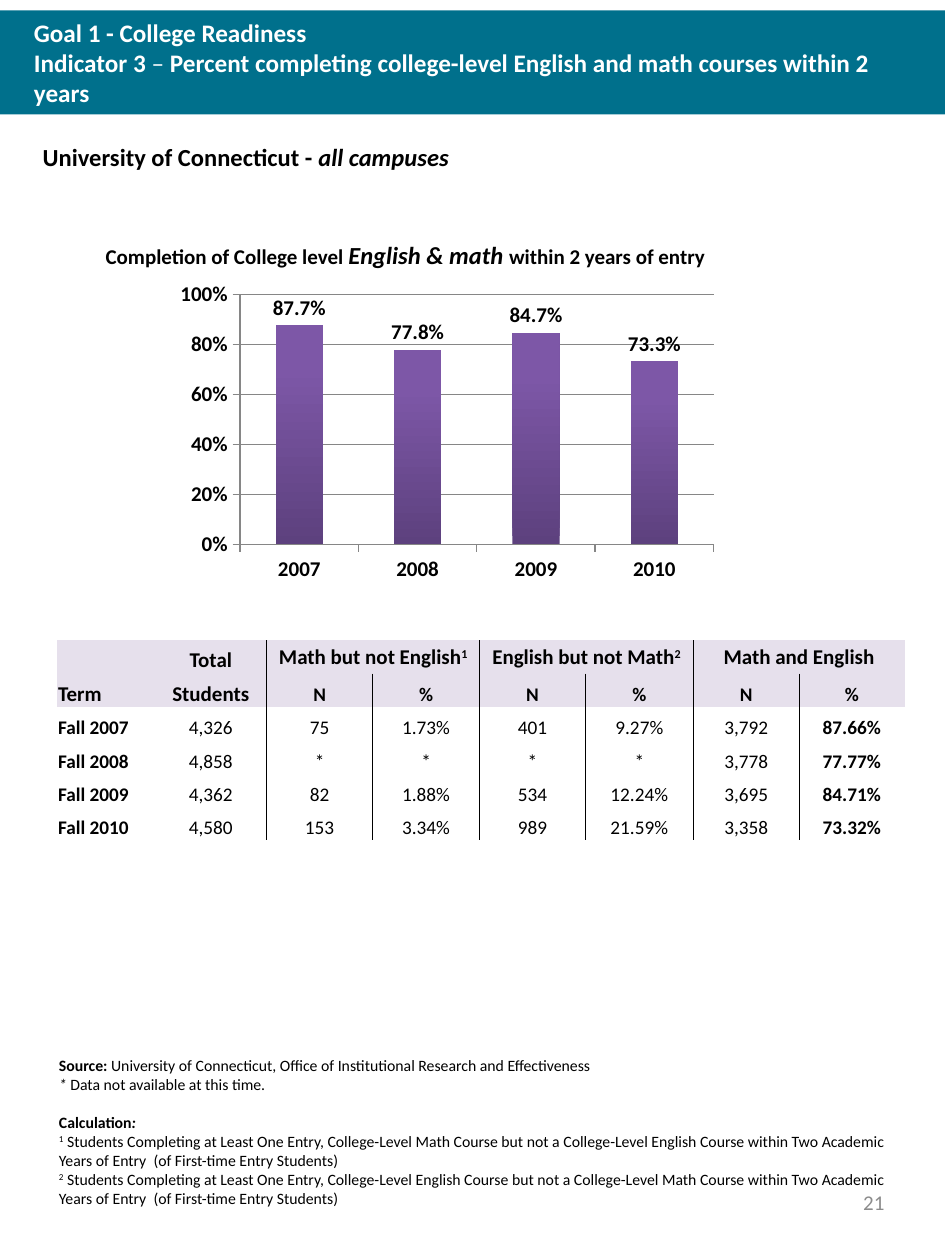
from lxml import etree
from pptx import Presentation
from pptx import util as u
from pptx.chart import data
from pptx.dml import color as dml
from pptx.enum import chart as ch, shapes, text
from pptx.oxml import parse_xml
from pptx.oxml.ns import nsdecls, qn

Cm, Pt = u.Cm, u.Pt
AL, ANC = text.PP_ALIGN, text.MSO_ANCHOR
GREY = "868686"


def rgb(value):
    return dml.RGBColor.from_string(value)


def add_run(p, txt, size=12, bold=False, italic=False, color="000000", sup=False):
    r = p.add_run()
    r.text = txt
    f = r.font
    f.name, f.size, f.bold, f.italic = "Calibri", Pt(size), bold, italic
    f.color.rgb = rgb(color)
    if sup:
        r._r.get_or_add_rPr().set("baseline", "30000")


prs = Presentation()
prs.slide_width, prs.slide_height = Cm(19.05), Cm(25.4)
s = prs.slides.add_slide(prs.slide_layouts[5])

# Title band, placed behind the title
band = s.shapes.add_shape(shapes.MSO_SHAPE.RECTANGLE, 0, Cm(0.21), Cm(19.05), Cm(2.1))
band.shadow.inherit = False
band.fill.solid()
band.fill.fore_color.rgb = rgb("00708C")
band.line.fill.background()
s.shapes._spTree.insert(2, band._element)

# Title
title = s.shapes.title
title.left, title.top, title.width, title.height = Cm(0.43), Cm(0.21), Cm(18.21), Cm(2.1)
tf = title.text_frame
tf.word_wrap = True
tf.auto_size = text.MSO_AUTO_SIZE.NONE
tf.vertical_anchor = ANC.MIDDLE
p = tf.paragraphs[0]
p.alignment = AL.LEFT
white = dict(size=14.4, color="FFFFFF")
add_run(p, "Goal 1 - College Readiness", bold=True, **white)
p.add_line_break()
add_run(p, "Indicator 3 ", bold=True, **white)
add_run(p, "– ", **white)
add_run(p, "Percent completing college-level English and math courses within 2 years",
        bold=True, **white)

# Institution and chart heading
tf = s.shapes.add_textbox(Cm(0.61), Cm(2.74), Cm(17.48), Cm(2.82)).text_frame
tf.word_wrap = True
p = tf.paragraphs[0]
add_run(p, "University of Connecticut - ", size=14, bold=True)
add_run(p, "all campuses", size=14, bold=True, italic=True)
p = tf.add_paragraph()
p.space_before = Pt(39)
p._p.get_or_add_pPr().set("marL", str(Cm(1.27)))
add_run(p, "Completion of College level ", bold=True)
add_run(p, "English & math ", size=14, bold=True, italic=True)
add_run(p, "within 2 years of entry", bold=True)

# Source and calculation notes
tf = s.shapes.add_textbox(Cm(0.94), Cm(21.16), Cm(17.48), Cm(3.43)).text_frame
tf.word_wrap = True
p = tf.paragraphs[0]
add_run(p, "Source: ", size=9, bold=True)
add_run(p, "University of Connecticut, Office of Institutional Research and Effectiveness", size=9)
p = tf.add_paragraph()
add_run(p, "* ", size=9, italic=True)
add_run(p, "Data not available at this time.", size=9)
p = tf.add_paragraph()
p.space_before = Pt(11)
add_run(p, "Calculation", size=9, bold=True)
add_run(p, ":", size=9, bold=True, italic=True)
for mark, taken, missed in [("1", "Math", "English"), ("2", "English", "Math")]:
    p = tf.add_paragraph()
    add_run(p, mark, size=9, sup=True)
    add_run(p, f" Students Completing at Least One Entry, College-Level {taken} Course but not a "
               f"College-Level {missed} Course within Two Academic Years of Entry  "
               "(of First-time Entry Students)", size=9)

# Page number
tf = s.shapes.add_textbox(Cm(15.24), Cm(23.55), Cm(2.84), Cm(1.35)).text_frame
tf.word_wrap = True
tf.vertical_anchor = ANC.MIDDLE
tf.paragraphs[0].alignment = AL.RIGHT
add_run(tf.paragraphs[0], "21", color="8C8C8C")

# Completion chart
cd = data.CategoryChartData(number_format="0.0%")
cd.categories = ["2007", "2008", "2009", "2010"]
cd.add_series("Series 1", [0.877, 0.778, 0.847, 0.733])
chart = s.shapes.add_chart(ch.XL_CHART_TYPE.COLUMN_CLUSTERED,
                           Cm(3.38), Cm(5.56), Cm(11.23), Cm(6.3), cd).chart
chart.has_legend = chart.has_title = False
chart.font.name, chart.font.size, chart.font.bold = "Calibri", Pt(12), True
chart.font.color.rgb = rgb("000000")

val, cat = chart.value_axis, chart.category_axis
val.minimum_scale, val.maximum_scale, val.major_unit = 0, 1, 0.2
val.tick_labels.number_format = "0%"
val.tick_labels.number_format_is_linked = False
val.has_major_gridlines = True
for line in (val.format.line, cat.format.line, val.major_gridlines.format.line):
    line.color.rgb = rgb(GREY)
    line.width = Pt(0.75)
for axis in (val, cat):
    axis.major_tick_mark = ch.XL_TICK_MARK.OUTSIDE

plot = chart.plots[0]
plot.gap_width = 150
plot.vary_by_categories = False
plot.has_data_labels = True
dl = plot.data_labels
dl.show_value = True
dl.number_format, dl.number_format_is_linked = "0.0%", False
dl.position = ch.XL_LABEL_POSITION.OUTSIDE_END
dl.font.name, dl.font.size, dl.font.bold = "Calibri", Pt(12), True

fill = plot.series[0].format.fill
fill.gradient()
fill.gradient_angle = 90
for stop, position, shade in zip(fill.gradient_stops, (0, 0.8), ("5D417E", "7D57A7")):
    stop.position = position
    stop.color.rgb = rgb(shade)

# Fixed inner plot area
area = chart._chartSpace.chart.plotArea
for old in area.findall(qn("c:layout")):
    area.remove(old)
sizes = "".join(f'<c:{k} val="{v}"/>' for k, v in
                [("x", 0.13), ("y", 0.06), ("w", 0.85), ("h", 0.8)])
area.insert(0, parse_xml(
    f'<c:layout {nsdecls("c")}><c:manualLayout><c:layoutTarget val="inner"/>'
    f'<c:xMode val="edge"/><c:yMode val="edge"/>{sizes}</c:manualLayout></c:layout>'))

# Results table
rows = [
    ["", "Total", "Math but not English", "", "English but not Math", "", "Math and English", ""],
    ["Term", "Students"] + ["N", "%"] * 3,
    ["Fall 2007", "4,326", "75", "1.73%", "401", "9.27%", "3,792", "87.66%"],
    ["Fall 2008", "4,858", "*", "*", "*", "*", "3,778", "77.77%"],
    ["Fall 2009", "4,362", "82", "1.88%", "534", "12.24%", "3,695", "84.71%"],
    ["Fall 2010", "4,580", "153", "3.34%", "989", "21.59%", "3,358", "73.32%"],
]
notes = {2: "1", 4: "2"}
tbl = s.shapes.add_table(6, 8, Cm(1.14), Cm(12.91), Cm(17.1), Cm(4.02)).table
tbl.first_row = tbl.horz_banding = False
tbl._tbl.tblPr[0].text = "{2D5ABB26-0587-4C30-8999-92F81FD0307C}"
for col, width in zip(tbl.columns, [1.98, 2.26, 2.13, 2.16, 2.13, 2.18, 2.13, 2.13]):
    col.width = Cm(width)
for row in tbl.rows:
    row.height = Cm(0.67)
for c in (2, 4, 6):
    tbl.cell(0, c).merge(tbl.cell(0, c + 1))

for i, row in enumerate(rows):
    for j, txt in enumerate(row):
        cell = tbl.cell(i, j)
        cell.margin_left = cell.margin_right = cell.margin_top = Cm(0.03)
        cell.margin_bottom = 0
        cell.vertical_anchor = ANC.MIDDLE if i == 0 and j > 1 else ANC.BOTTOM
        if i < 2:
            cell.fill.solid()
            cell.fill.fore_color.rgb = rgb("E6E0EC")
        else:
            cell.fill.background()
        p = cell.text_frame.paragraphs[0]
        p.alignment = AL.CENTER if j else AL.LEFT
        p.font.size = Pt(11)
        if txt:
            size = 12 if i == 0 or (i == 1 and j < 2) else 11
            add_run(p, txt, size=size, bold=i < 2 or j in (0, 7))
            if i == 0 and j in notes:
                add_run(p, notes[j], size=size, bold=True, sup=True)
        # Rules between the column groups
        if 0 < j < 7:
            ln = etree.Element(qn("a:lnR" if j % 2 else "a:lnL"), w=str(Pt(0.5)))
            solid = etree.SubElement(ln, qn("a:solidFill"))
            etree.SubElement(solid, qn("a:srgbClr"), val="000000")
            cell._tc.get_or_add_tcPr().insert(0, ln)

prs.save("out.pptx")
